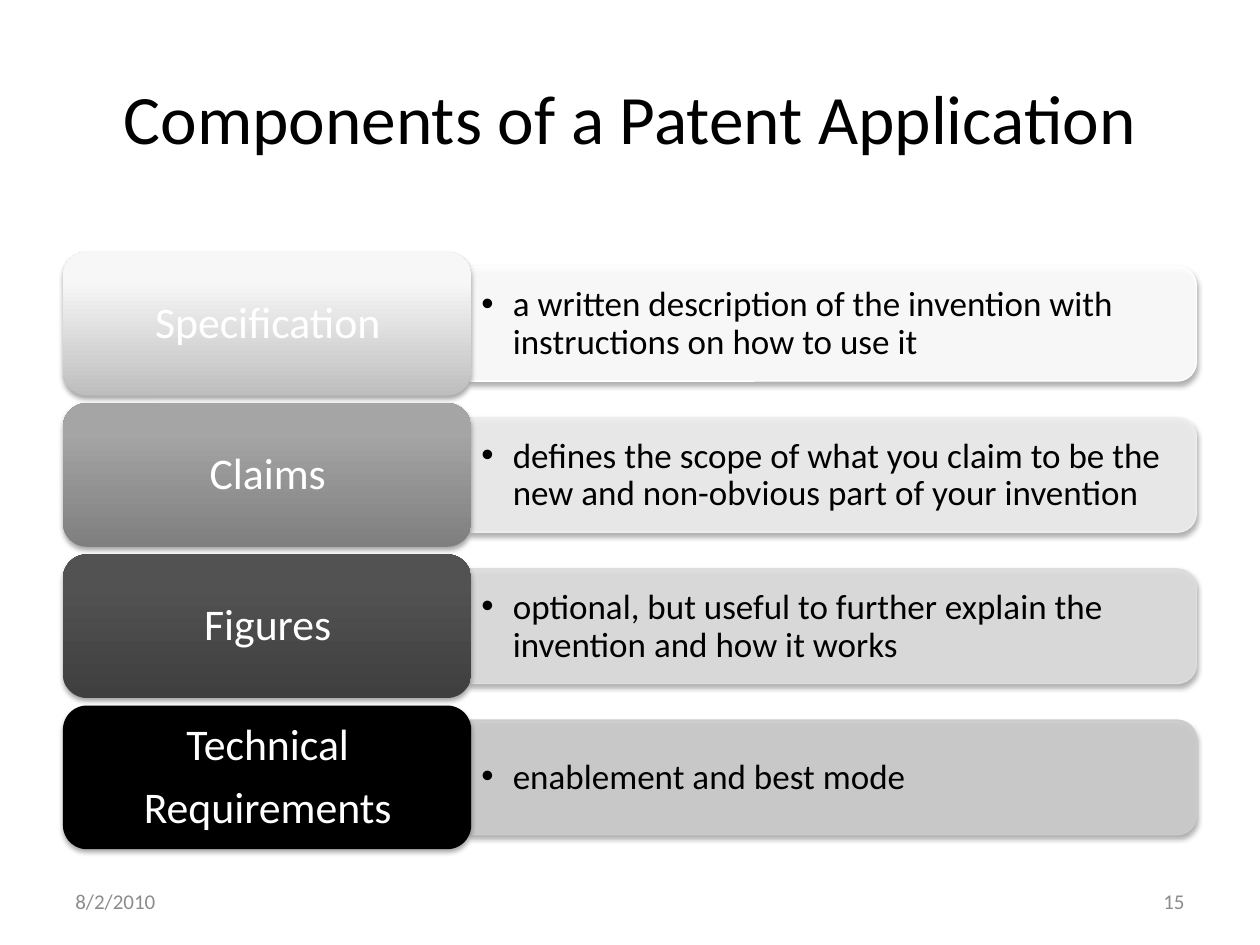
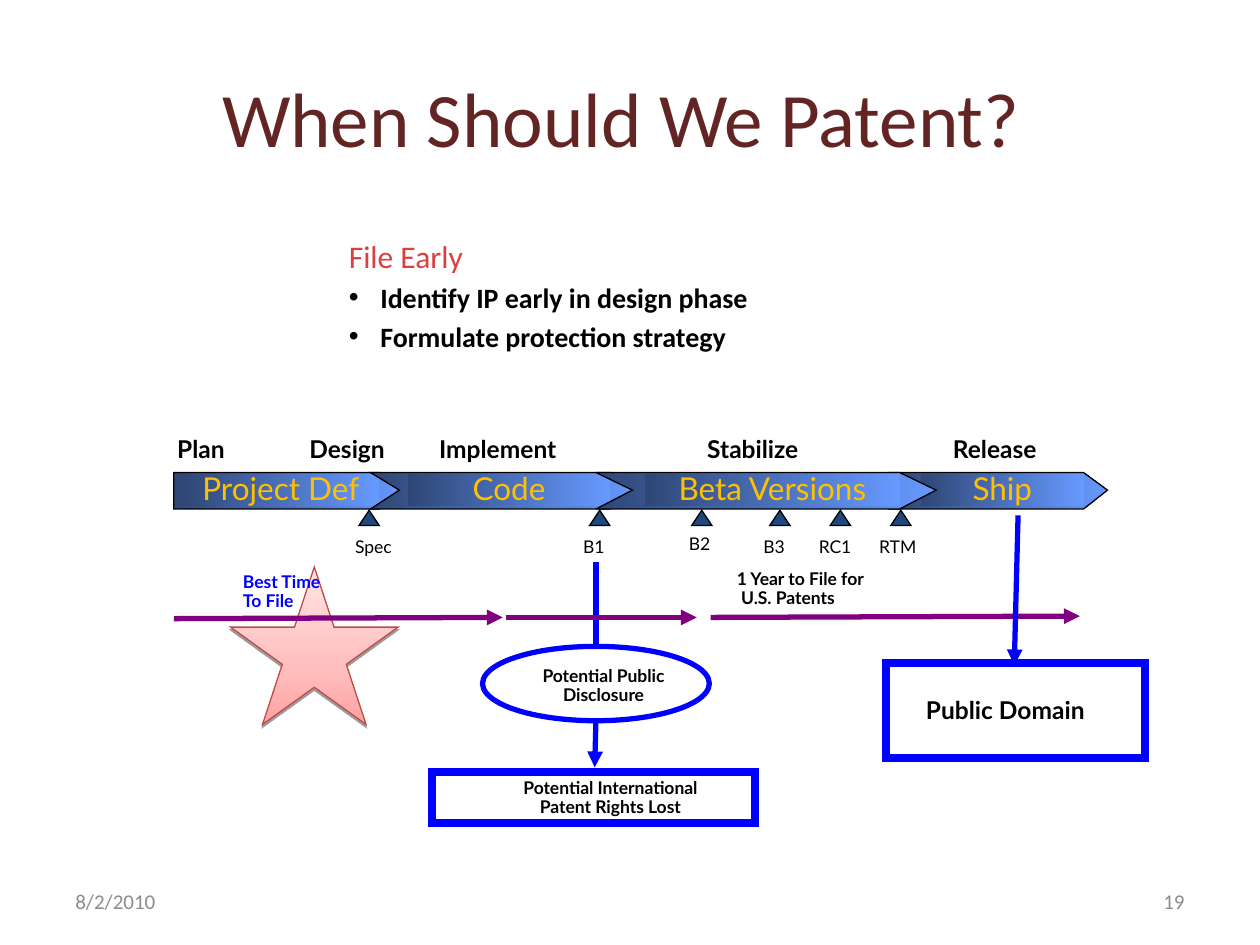
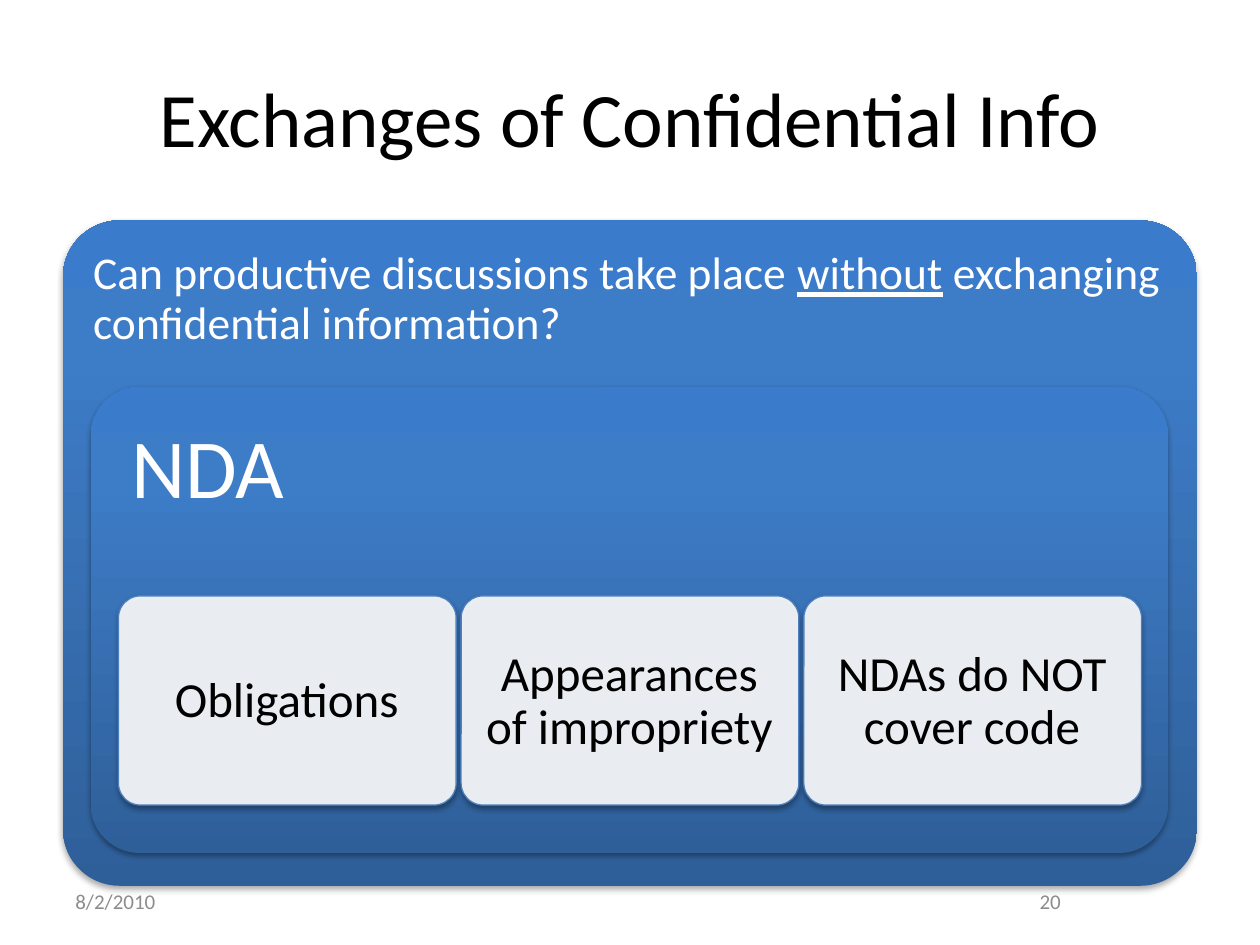
"""Builds three slides on patent applications, filing time and confidential information."""
from lxml.etree import SubElement as Sub
from pptx import Presentation
from pptx.dml.color import RGBColor
from pptx.enum.shapes import MSO_CONNECTOR as Link, MSO_SHAPE as Kind
from pptx.enum.text import MSO_ANCHOR as Anchor, PP_ALIGN as Align
from pptx.oxml.ns import qn
from pptx.util import Inches, Pt

BLACK, WHITE, GREY = "000000", "FFFFFF", "8C8C8C"
BLUE, PURPLE, GOLD, NAVY = "0000FF", "800080", "FFC000", "1F497D"
STEEL = [(0, "2F5F99"), (80, "3D7CC7"), (100, "3A7CCB")]
BAND = [(0, "2F4776"), (100, "6699FF")]
PINK = [(0, "FFA2A1"), (35, "FFBEBD"), (100, "FFE5E5")]
SOFT = (35, 3.1, 1.8)
HARD = (38, 0, 1.6)

PARTS = [
    (["Specification"], "a written description of the invention with instructions on how to use it",
     [(0, "BEBEBE"), (80, "F7F7F7"), (100, "F8F8F8")], "FFFFFF"),
    (["Claims"], "defines the scope of what you claim to be the new and non-obvious part of your invention",
     [(0, "7F7F7F"), (80, "A5A5A5"), (100, "A5A5A5")], "EEEEEE"),
    (["Figures"], "optional, but useful to further explain the invention and how it works",
     [(0, "3F3F3F"), (80, "525252"), (100, "535353")], "DDDDDD"),
    (["Technical", "Requirements"], "enablement and best mode", BLACK, "CBCBCB"),
]

ADVICE = ["File Early", "Identify IP early in design phase", "Formulate protection strategy"]
PHASES = [("Plan", 0.92, 1.35), ("Design", 2.08, 1.35), ("Implement", 3.19, 1.52),
          ("Stabilize", 5.3, 1.35), ("Release", 7.22, 1.35)]
STAGES = [("Project Def", 1.38, 3.01, 3.21, 0, 1.45), ("Code", 2.94, 4.84, 5.07, 0.23, 3.24),
          ("Ship", 7.06, 8.6, 8.79, 0.19, 7.31), ("Beta Versions", 4.73, 7.14, 7.43, 0.29, 5.12)]
MARKS = [("Spec", 2.85, 2.72, 4.22), ("B1", 4.68, 4.53, 4.22), ("B2", 5.49, 5.37, 4.2),
         ("B3", 6.11, 5.96, 4.22), ("RC1", 6.59, 6.4, 4.22), ("RTM", 7.07, 6.88, 4.22)]
LINES = [(4.73, 4.46, 4.73, 5.13, BLUE, False), (4.73, 5.71, 4.72, 6.09, BLUE, True),
         (1.38, 4.91, 3.99, 4.9, PURPLE, True), (4.02, 4.9, 5.53, 4.9, PURPLE, True),
         (5.64, 4.9, 8.57, 4.89, PURPLE, True), (8.08, 4.09, 8.05, 5.28, BLUE, True)]
FRAMES = [(Kind.RECTANGLE, (3.43, 6.13, 2.56, 0.4), 4.5),
          (Kind.RECTANGLE, (7.03, 5.26, 2.06, 0.76), 4.5),
          (Kind.OVAL, (3.83, 5.13, 1.8, 0.59), 3)]
NOTES = [("Best Time\nTo File", (1.83, 4.5, 0.98, 0.45), 10, BLUE, Align.LEFT),
         ("1 Year to File for\n U.S. Patents", (5.75, 4.48, 1.45, 0.45), 10, BLACK, Align.LEFT),
         ("Potential International\nPatent Rights Lost", (3.91, 6.14, 1.87, 0.45), 10, BLACK, Align.CENTER),
         ("Public Domain", (7.25, 5.49, 1.75, 0.35), 14, BLACK, Align.LEFT),
         ("Potential Public\nDisclosure", (4.09, 5.25, 1.4, 0.45), 10, BLACK, Align.CENTER)]

QUERY = "Can productive discussions take place "
REST = [("without", True), (" exchanging confidential information?", False)]
CARDS = ["Obligations", "Appearances of impropriety", "NDAs do NOT cover code"]


def rgb(code):
    return RGBColor.from_string(code)


def place(at):
    return [Inches(n) for n in at]


def blend(props, stops, angle):
    grad = props.find(qn("a:gradFill"))
    for child in list(grad):
        grad.remove(child)
    group = Sub(grad, qn("a:gsLst"))
    for pos, code in stops:
        stop = Sub(group, qn("a:gs"), pos=str(pos * 1000))
        Sub(stop, qn("a:srgbClr"), val=code)
    Sub(grad, qn("a:lin"), ang=str(angle * 60000), scaled="0")


def paint(shape, fill=None, line=None, width=0.75, angle=270, alpha=None, shade=None):
    props = shape._element.spPr
    if fill is None:
        shape.fill.background()
    elif isinstance(fill, str):
        shape.fill.solid()
        shape.fill.fore_color.rgb = rgb(fill)
        if alpha:
            Sub(props.find(qn("a:solidFill"))[0], qn("a:alpha"), val=str(alpha * 1000))
    else:
        shape.fill.gradient()
        blend(props, fill, angle)
    if line:
        shape.line.color.rgb = rgb(line)
        shape.line.width = Pt(width)
        Sub(props.find(qn("a:ln")), qn("a:miter"), lim="800000")
    else:
        shape.line.fill.background()
    shape.shadow.inherit = False
    if shade:
        dark, blur, dist = shade
        cast = Sub(props.find(qn("a:effectLst")), qn("a:outerShdw"), blurRad=str(Pt(blur)),
                   dist=str(Pt(dist)), dir="5400000", rotWithShape="0")
        Sub(Sub(cast, qn("a:srgbClr"), val=BLACK), qn("a:alpha"), val=str(dark * 1000))
    return shape


def draw(slide, kind, at, adj=None, **look):
    shape = slide.shapes.add_shape(kind, *place(at))
    if adj:
        shape.adjustments[0] = adj
    return paint(shape, **look)


def write(shape, lines, size, color=BLACK, font="Calibri", bold=False, align=Align.LEFT,
          mid=False, pad=(0.1, 0.05, 0.1, 0.05), space=None, gap=0, wrap=True):
    frame = shape.text_frame
    frame.word_wrap = wrap
    frame.vertical_anchor = Anchor.MIDDLE if mid else Anchor.TOP
    (frame.margin_left, frame.margin_top,
     frame.margin_right, frame.margin_bottom) = place(pad)
    for i, line in enumerate(lines):
        para = frame.add_paragraph() if i else frame.paragraphs[0]
        para.text = line
        para.alignment = align
        if space:
            para.line_spacing = space
        if i and gap:
            para.space_before = Pt(gap)
        para.font.name, para.font.size, para.font.bold = font, Pt(size), bold
        para.font.color.rgb = rgb(color)
    return frame.paragraphs


def label(slide, at, lines, size, **style):
    return write(slide.shapes.add_textbox(*place(at)), lines, size, **style)


def hang(para, dot=True):
    props = para._p.get_or_add_pPr()
    props.set("marL", str(Inches(0.25)))
    props.set("indent", str(-Inches(0.25)))
    if dot:
        face = Sub(props, qn("a:buFont"), typeface="Arial")
        mark = Sub(props, qn("a:buChar"), char="•")
        for part in (face, mark):
            props.find(qn("a:defRPr")).addprevious(part)


def start(deck, title, page, size=44, color=BLACK, side=Align.RIGHT):
    slide = deck.slides.add_slide(deck.slide_layouts[6])
    label(slide, (0.5, 0.3, 9, 1.25), [title], size, color=color, align=Align.CENTER, mid=True)
    for left, word, align in ((0.5, "8/2/2010", Align.LEFT), (7.17, page, side)):
        label(slide, (left, 6.95, 2.33, 0.4), [word], 12, color=GREY, align=align, mid=True)
    return slide


def link(slide, x1, y1, x2, y2, color, head):
    line = slide.shapes.add_connector(Link.STRAIGHT, *place((x1, y1, x2, y2)))
    line.line.color.rgb = rgb(color)
    line.line.width = Pt(3)
    props = line._element.spPr
    if head:
        Sub(props.find(qn("a:ln")), qn("a:tailEnd"), type="triangle")
    Sub(props, qn("a:effectLst"))


def stage(slide, name, left, neck, tip, notch, inner):
    top, mid, low = 3.75, 3.89, 4.04
    points = [(neck, top), (tip, mid), (neck, low), (left, low), (left + notch, mid)]
    pen = slide.shapes.build_freeform(Inches(left), Inches(top))
    pen.add_line_segments([place(point) for point in points], close=True)
    paint(pen.convert_to_shape(), BAND, BLACK, angle=0)
    plate = draw(slide, Kind.RECTANGLE, (inner, 3.76, neck - inner, 0.26), fill=BAND, angle=0)
    write(plate, [name], 18, color=GOLD, font="Lato", align=Align.CENTER, mid=True,
          pad=(0, 0, 0, 0), space=0.9)


def parts(deck):
    slide = start(deck, "Components of a Patent Application", "15", size=39.6)
    for i, (name, text, fill, tint) in enumerate(PARTS):
        top = 2 + 1.2 * i
        bar = draw(slide, Kind.ROUND_2_SAME_RECTANGLE, (6.16, top - 2.31, 0.91, 5.76),
                   fill=tint, line=tint, alpha=90, shade=SOFT)
        bar.rotation = 90
        paras = label(slide, (3.74, top + 0.16, 5.72, 0.83), [text], 20, mid=True,
                      pad=(0.08, 0.04, 0.08, 0.04), space=0.9)
        hang(paras[0])
        draw(slide, Kind.ROUNDED_RECTANGLE, (0.5, top, 3.24, 1.14), fill=fill, shade=SOFT)
        label(slide, (0.56, top + 0.06, 3.13, 1.03), name, 25, color=WHITE,
              align=Align.CENTER, mid=True, space=0.9, gap=8.75)


def timing(deck):
    slide = start(deck, "When Should We Patent? ", "19", color="632523")
    draw(slide, Kind.STAR_5_POINT, (1.83, 4.5, 1.33, 1.25), fill=PINK, line="BE4B48", shade=HARD)
    paras = label(slide, (2.67, 1.83, 4.41, 1.01), ADVICE, 16, bold=True, gap=3.2)
    for i, para in enumerate(paras):
        hang(para, dot=i > 0)
    first = paras[0].font
    first.size, first.bold, first.color.rgb = Pt(18), False, rgb("DA413E")
    for row in STAGES:
        stage(slide, *row)
    for name, left, edge, top in MARKS:
        draw(slide, Kind.ISOSCELES_TRIANGLE, (left, 4.05, 0.16, 0.12), fill=NAVY, line=BLACK)
        label(slide, (edge, top, 0.5, 0.26), [name], 10, font="Lato", space=0.9, wrap=False)
    for row in LINES:
        link(slide, *row)
    for kind, at, width in FRAMES:
        draw(slide, kind, at, line=BLUE, width=width)
    for text, at, size, color, align in NOTES:
        label(slide, at, [text], size, color=color, font="Lato", bold=True, align=align,
              space=0.9, wrap=False)
    for name, left, width in PHASES:
        label(slide, (left, 3.42, width, 0.17), [name], 14, font="Lato", bold=True,
              align=Align.CENTER, space=0.9)


def secrets(deck):
    slide = start(deck, "Exchanges of Confidential Info", "20", side=Align.CENTER)
    box = Kind.ROUNDED_RECTANGLE
    draw(slide, box, (0.5, 1.75, 9, 5.28), 0.085, fill=STEEL, shade=SOFT)
    paras = label(slide, (0.63, 1.88, 8.74, 1.03), [QUERY], 26, color=WHITE,
                  pad=(0.11,) * 4, space=0.9)
    for part, under in REST:
        run = paras[0].add_run()
        run.text, run.font.underline = part, under
    draw(slide, box, (0.72, 3.07, 8.55, 3.7), 0.105, fill=STEEL, shade=SOFT)
    label(slide, (0.84, 3.18, 8.32, 1.32), ["NDA"], 48, color=WHITE,
          pad=(0.2,) * 4, space=0.9)
    for i, text in enumerate(CARDS):
        left = 0.94 + 2.72 * i
        draw(slide, box, (left, 4.73, 2.68, 1.66), 0.105, fill=WHITE, line="4F81BD",
             alpha=90, shade=SOFT)
        label(slide, (left + 0.05, 4.79, 2.57, 1.56), [text], 28, align=Align.CENTER,
              mid=True, pad=(0.12,) * 4, space=0.9)


def main():
    deck = Presentation()
    deck.slide_width, deck.slide_height = Inches(10), Inches(7.5)
    for build in (parts, timing, secrets):
        build(deck)
    deck.save("out.pptx")


if __name__ == "__main__":
    main()
